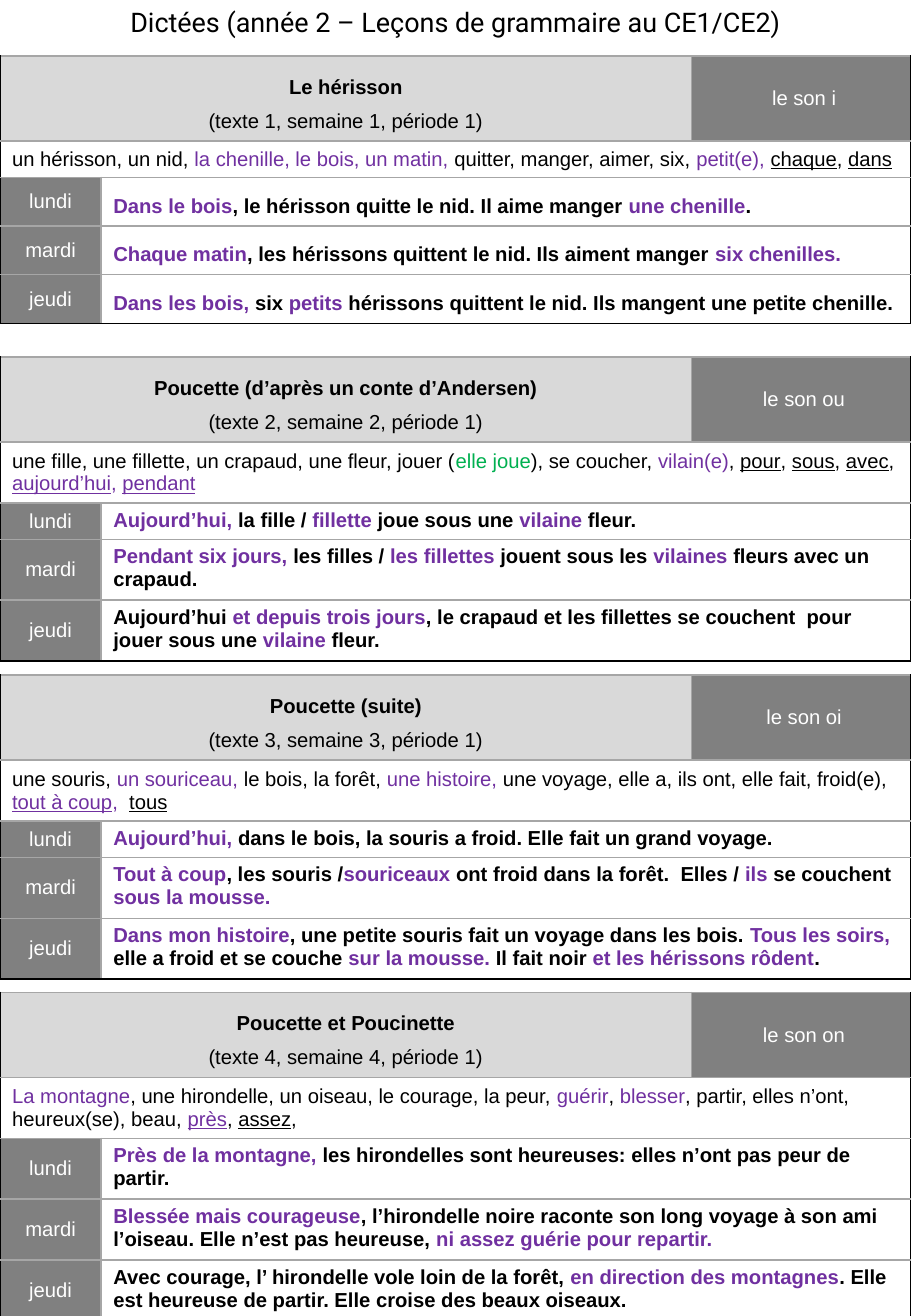
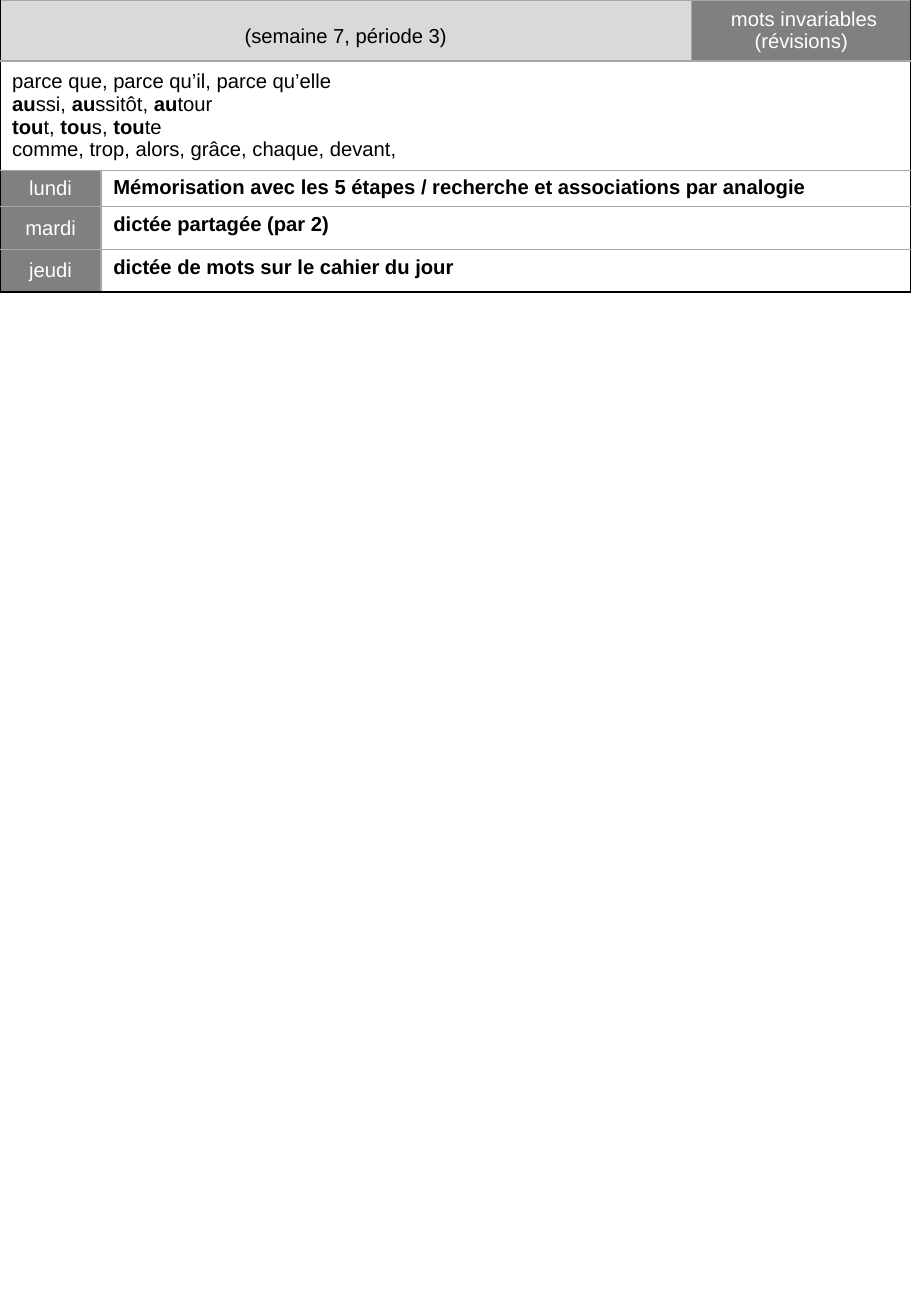
"""Build two portrait pages of weekly French dictation tables."""
from dataclasses import dataclass

from pptx import Presentation
from pptx.dml.color import RGBColor as Rgb
from pptx.enum.text import MSO_ANCHOR as Anchor, PP_ALIGN as Align
from pptx.oxml.ns import qn
from pptx.slide import Slide
from pptx.table import Table, _Cell as Cell
from pptx.text.text import TextFrame as Frame
from pptx.util import Pt
from lxml.etree import SubElement as Sub


@dataclass(frozen=True)
class Theme:
    """Colours, fonts and sizes shared by the slides."""
    black: str = "000000"
    white: str = "FFFFFF"
    pale: str = "D9D9D9"
    dark: str = "808080"
    rule: str = "A6A6A6"
    new: str = "7030A0"
    verb: str = "00B050"
    font: str = "Arial"
    head: str = "Roboto"
    size: float = 12
    large: float = 16
    line: float = 1


@dataclass(frozen=True)
class Week:
    """One dictation table; marks: ~ purple, ^ green, _ underline, * bold."""
    top: float
    rows: tuple[float, ...]
    title: str
    sound: str
    words: str
    days: tuple[str, str, str]
    space: float = 1


THEME = Theme()
WIDTH, HEIGHT = 540, 780
COLS = (60, 350, 130)
NAMES = ("lundi", "mardi", "jeudi")

FIRST = (
    Week(33.1, (47.7, 20.4, 27.4, 27.4, 27.4),
         "*Le hérisson*\n(texte 1, semaine 1, période 1)", "le son i",
         "un hérisson, un nid, ~la chenille, le bois, un matin, ~quitter, "
         "manger, aimer, six,~ petit(e), ~_chaque_, _dans_",
         ("~Dans le bois~, le hérisson quitte le nid. Il aime manger "
          "~une chenille~.",
          "~Chaque matin~, les hérissons quittent le nid. Ils aiment manger "
          "~six chenilles.~",
          "~Dans les bois, ~six ~petits~ hérissons quittent le nid. "
          "Ils mangent une petite chenille."), 1.5),
    Week(211.6, (47.4, 34.1, 20.7, 34.1, 34.1),
         "*Poucette (d’après un conte d’Andersen)*\n"
         "(texte 2, semaine 2, période 1)", "le son ou",
         "une fille, une fillette, un crapaud, une fleur, jouer (^elle joue^), "
         "se coucher, ~vilain(e)~, _pour_, _sous_, _avec_, "
         "~_aujourd’hui_, _pendant_~",
         ("~Aujourd’hui,~ la fille / ~fillette~ joue sous une ~vilaine~ fleur.",
          "~Pendant six jours, ~les filles / ~les fillettes ~jouent sous les "
          "~vilaines ~fleurs avec un crapaud.",
          "Aujourd’hui ~et depuis trois jours~, le crapaud et les fillettes "
          "se couchent  pour jouer sous une ~vilaine~ fleur.")),
    Week(400.1, (50.4, 36.1, 21.6, 36, 36),
         "*Poucette (suite)*\n(texte 3, semaine 3, période 1)", "le son oi",
         "une souris, ~un souriceau,~ le bois, la forêt, ~une histoire, ~"
         "une voyage, elle a, ils ont, elle fait, froid(e), "
         "~_tout à coup_,  ~_tous_",
         ("~Aujourd’hui,~ dans le bois, la souris a froid. "
          "Elle fait un grand voyage.",
          "~Tout à coup~, les souris /~souriceaux~ ont froid dans la forêt.  "
          "Elles / ~ils~ se couchent ~sous la mousse.~",
          "~Dans mon histoire~, une petite souris fait un voyage dans les "
          "bois. ~Tous les soirs, ~elle a froid et se couche ~sur la mousse. ~"
          "Il fait noir ~et les hérissons rôdent~.")),
    Week(588.2, (50.4, 36.1, 36, 36, 36),
         "*Poucette et Poucinette*\n(texte 4, semaine 4, période 1)",
         "le son on",
         "~La montagne~, une hirondelle, un oiseau, le courage, la peur, "
         "~guérir~, ~blesser~, partir, elles n’ont, heureux(se), beau, "
         "~_près_~, _assez_,",
         ("~Près de la montagne,~ les hirondelles sont heureuses: elles n’ont "
          "pas peur de partir.",
          "~Blessée mais courageuse~, l’hirondelle noire raconte son long "
          "voyage à son ami l’oiseau. Elle n’est pas heureuse, "
          "~ni assez guérie pour repartir.~",
          "Avec courage, l’ hirondelle vole loin de la forêt, "
          "~en direction des montagnes~. Elle est heureuse de partir. "
          "Elle croise des beaux oiseaux.")),
)
SECOND = (
    Week(0, (36.1, 64.6, 21.6, 25.4, 25.2),
         "(semaine 7, période 3)", "mots invariables\n(révisions)",
         "parce que, parce qu’il, parce qu’elle\n"
         "*au*ssi, *au*ssitôt, *au*tour\n*tou*t, *tou*s, *tou*te\n"
         "comme, trop, alors, grâce, chaque, devant,",
         ("Mémorisation avec les 5 étapes / recherche et associations "
          "par analogie",
          "dictée partagée (par 2)",
          "dictée de mots sur le cahier du jour")),
)


def split(text: str) -> list[tuple[str, frozenset[str]]]:
    """Cut marked text into pieces, each with its active marks."""
    parts, marks, piece = [], frozenset(), ""
    for char in text:
        if char in "~^_*":
            if piece:
                parts.append((piece, marks))
            marks, piece = marks ^ {char}, ""
        else:
            piece += char
    return parts + [(piece, marks)] if piece else parts


def write(frame: Frame, text: str, *, color: str = THEME.black,
          bold: bool = False, size: float = THEME.size,
          font: str = THEME.font, align: Align = Align.LEFT,
          space: float = 1) -> None:
    """Fill a frame with marked text, one paragraph a line."""
    for i, line in enumerate(text.split("\n")):
        para = frame.add_paragraph() if i else frame.paragraphs[0]
        para.alignment, para.line_spacing = align, space
        for piece, marks in split(line):
            run = para.add_run()
            run.text = piece
            face = run.font
            face.name, face.size = font, Pt(size)
            face.bold = bold or "*" in marks
            face.underline = "_" in marks
            tone = (THEME.new if "~" in marks
                    else THEME.verb if "^" in marks else color)
            face.color.rgb = Rgb.from_string(tone)


def edge(cell: Cell, tones: dict[str, str]) -> None:
    """Draw the four borders of a cell."""
    props = cell._tc.get_or_add_tcPr()
    for side, tone in tones.items():
        line = Sub(props, qn(f"a:ln{side}"), w=str(Pt(THEME.line)))
        Sub(Sub(line, qn("a:solidFill")), qn("a:srgbClr"), val=tone)


def block(table: Table, row: int, first: int, last: int, fill: str) -> Cell:
    """Merge, border and fill part of a row, and return its first cell."""
    cell = table.cell(row, first)
    if last > first:
        cell.merge(table.cell(row, last))
    tones = {"L": THEME.rule if first else THEME.black,
             "R": THEME.black if last == len(COLS) - 1 else THEME.rule,
             "T": THEME.rule,
             "B": THEME.black if row == len(NAMES) + 1 else THEME.rule}
    for col in range(first, last + 1):
        part = table.cell(row, col)
        edge(part, tones)
        part.fill.solid()
        part.fill.fore_color.rgb = Rgb.from_string(fill)
    cell.vertical_anchor = Anchor.MIDDLE
    return cell


def draw(slide: Slide, week: Week) -> None:
    """Add the table of one week."""
    table = slide.shapes.add_table(
        len(week.rows), len(COLS), Pt(0), Pt(week.top),
        Pt(WIDTH), Pt(sum(week.rows))).table
    table.first_row = table.horz_banding = False
    for col, width in zip(table.columns, COLS):
        col.width = Pt(width)
    for row, height in zip(table.rows, week.rows):
        row.height = Pt(height)
    write(block(table, 0, 0, 1, THEME.pale).text_frame, week.title,
          align=Align.CENTER, space=1.5)
    write(block(table, 0, 2, 2, THEME.dark).text_frame, " " + week.sound,
          color=THEME.white, align=Align.CENTER)
    write(block(table, 1, 0, 2, THEME.white).text_frame, week.words)
    for row, (name, text) in enumerate(zip(NAMES, week.days), 2):
        write(block(table, row, 0, 0, THEME.dark).text_frame, name,
              color=THEME.white, align=Align.CENTER)
        cell = block(table, row, 1, 2, THEME.white)
        cell.vertical_anchor = Anchor.TOP
        write(cell.text_frame, text, bold=True, space=week.space)


def main() -> None:
    """Build and save the deck."""
    deck = Presentation()
    deck.slide_width, deck.slide_height = Pt(WIDTH), Pt(HEIGHT)
    for weeks in (FIRST, SECOND):
        slide = deck.slides.add_slide(deck.slide_layouts[6])
        if weeks is FIRST:
            box = slide.shapes.add_textbox(Pt(0), Pt(0), Pt(WIDTH), Pt(26.6))
            box.text_frame.word_wrap = True
            write(box.text_frame,
                  "Dictées (année 2 – Leçons de grammaire au CE1/CE2)",
                  size=THEME.large, font=THEME.head, align=Align.CENTER)
        for week in weeks:
            draw(slide, week)
    deck.save("out.pptx")


if __name__ == "__main__":
    main()
